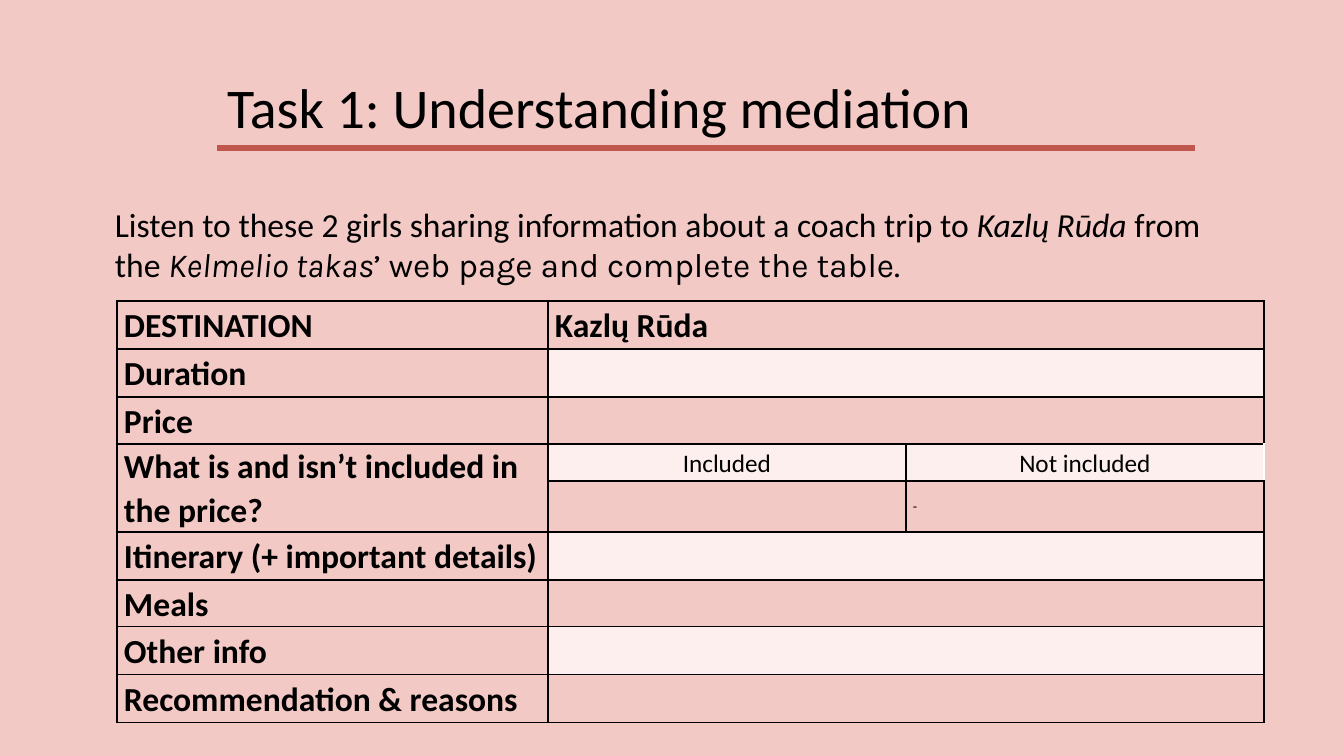
from lxml.etree import SubElement
from pptx import Presentation
from pptx.dml.color import RGBColor
from pptx.enum.shapes import MSO_CONNECTOR
from pptx.enum.text import MSO_ANCHOR, MSO_AUTO_SIZE, PP_ALIGN
from pptx.oxml.ns import qn
from pptx.util import Pt

SLIDE_W, SLIDE_H = 1344, 756
EMU_PER_PX = 12192000 / SLIDE_W

BLACK = RGBColor(0x00, 0x00, 0x00)
WHITE = RGBColor(0xFF, 0xFF, 0xFF)
PINK = RGBColor(0xF3, 0xC9, 0xC5)
PALE_PINK = RGBColor(0xFC, 0xEF, 0xEE)
BRICK = RGBColor(0xBF, 0x57, 0x4F)

COLUMN_WIDTHS = [431, 358, 358]
ROW_HEIGHTS = [48, 48, 47, 37, 51, 48, 47, 48, 48]
INCLUDED_ROW = 3  # this row and the next have two answer columns
ROW_LABELS = {
    0: "DESTINATION",
    1: "Duration",
    2: "Price",
    3: "What is and isn’t included in the price?",
    5: "Itinerary (+ important details)",
    6: "Meals",
    7: "Other info",
    8: "Recommendation & reasons",
}


def px(length):
    return round(length * EMU_PER_PX)


def box_px(*lengths):
    return [px(length) for length in lengths]


def style_font(font, size, name="Calibri", bold=False, italic=False):
    font.size = Pt(size)
    font.name = name
    font.bold = bold
    font.italic = italic
    font.color.rgb = BLACK


def add_heading(slide, left, top, width, height):
    # Rule under the title
    rule_y = top + 111
    rule = slide.shapes.add_connector(
        MSO_CONNECTOR.STRAIGHT, *box_px(left, rule_y, left + 978, rule_y))
    rule.line.color.rgb = BRICK
    rule.line.width = Pt(4.5)
    SubElement(rule._element.spPr, qn("a:effectLst"))

    # Title
    title = slide.shapes.title
    title.left, title.top, title.width, title.height = box_px(left, top, width, height)
    frame = title.text_frame
    frame.text = "Task 1: Understanding mediation"
    frame.vertical_anchor = MSO_ANCHOR.MIDDLE
    paragraph = frame.paragraphs[0]
    paragraph.alignment = PP_ALIGN.LEFT
    paragraph.line_spacing = 0.9
    style_font(paragraph.runs[0].font, 40)


def add_instructions(slide, left, top, width, height):
    instructions = slide.shapes.add_textbox(*box_px(left, top, width, height))
    frame = instructions.text_frame
    frame.word_wrap = True
    frame.auto_size = MSO_AUTO_SIZE.SHAPE_TO_FIT_TEXT
    for text, name, italic in [
        ("Listen to these 2 girls sharing information about a coach trip to ", "Calibri", False),
        ("Kazlų Rūda ", "Calibri", True),
        ("from the ", "Calibri", False),
        ("Kelmelio takas", "Karla", True),
        ("’ web page and complete the table.", "Karla", False),
    ]:
        run = frame.paragraphs[0].add_run()
        run.text = text
        style_font(run.font, 24, name, italic=italic)


def style_cell(cell, fill, right_border=BLACK):
    # Borders come before the fill in the cell properties
    properties = cell._tc.get_or_add_tcPr()
    for side in "LRTB":
        border = SubElement(properties, qn(f"a:ln{side}"), w=str(Pt(1)))
        color = right_border if side == "R" else BLACK
        SubElement(SubElement(border, qn("a:solidFill")), qn("a:srgbClr"), val=str(color))
    cell.fill.solid()
    cell.fill.fore_color.rgb = fill
    cell.vertical_anchor = MSO_ANCHOR.MIDDLE
    cell.margin_left = cell.margin_right = px(7)
    cell.margin_top = cell.margin_bottom = 0


def write_cell(cell, text, size=24, bold=True, alignment=PP_ALIGN.LEFT):
    cell.text = text
    paragraph = cell.text_frame.paragraphs[0]
    paragraph.alignment = alignment
    paragraph.line_spacing = 1.07
    paragraph.space_after = Pt(8)
    style_font(paragraph.runs[0].font, size, bold=bold)


def add_trip_table(slide, left, top):
    table = slide.shapes.add_table(
        len(ROW_HEIGHTS), len(COLUMN_WIDTHS),
        *box_px(left, top, sum(COLUMN_WIDTHS), sum(ROW_HEIGHTS))).table
    table.first_row = table.horz_banding = False
    for column, width in zip(table.columns, COLUMN_WIDTHS):
        column.width = px(width)
    for row, height in zip(table.rows, ROW_HEIGHTS):
        row.height = px(height)

    # Fills and borders: answers alternate between the two pinks
    for row in range(len(ROW_HEIGHTS)):
        for column in range(len(COLUMN_WIDTHS)):
            pale = column > 0 and row % 2 == 1
            open_edge = (row, column) == (INCLUDED_ROW, 2)
            style_cell(table.cell(row, column), PALE_PINK if pale else PINK,
                       WHITE if open_edge else BLACK)

    # Merged cells
    details_row = INCLUDED_ROW + 1
    table.cell(INCLUDED_ROW, 0).merge(table.cell(details_row, 0))
    for row in range(len(ROW_HEIGHTS)):
        if row not in (INCLUDED_ROW, details_row):
            table.cell(row, 1).merge(table.cell(row, 2))

    # Wording
    for row, label in ROW_LABELS.items():
        write_cell(table.cell(row, 0), label)
    write_cell(table.cell(0, 1), "Kazlų Rūda")
    for column, label in enumerate(["Included", "Not included"], start=1):
        write_cell(table.cell(INCLUDED_ROW, column), label, 18, False, PP_ALIGN.CENTER)
    write_cell(table.cell(details_row, 2), "-", 10, False)


def main():
    deck = Presentation()
    deck.slide_width, deck.slide_height = box_px(SLIDE_W, SLIDE_H)
    slide = deck.slides.add_slide(deck.slide_layouts[5])
    slide.background.fill.solid()
    slide.background.fill.fore_color.rgb = PINK

    add_heading(slide, 217, 37, 1073, 146)
    add_trip_table(slide, 117, 301)
    add_instructions(slide, 105, 199, 1158, 92)
    deck.save("out.pptx")


if __name__ == "__main__":
    main()
